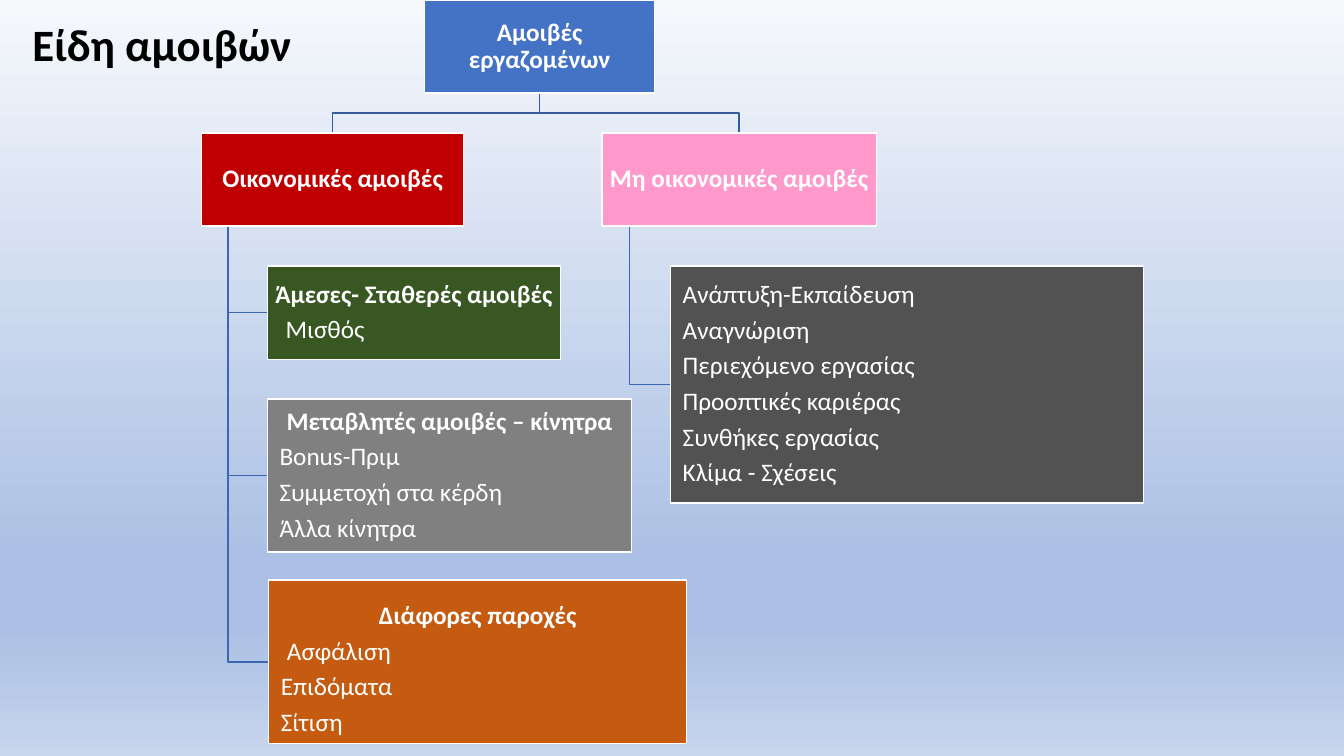
from copy import deepcopy
from dataclasses import dataclass

from pptx import Presentation
from pptx.dml.color import RGBColor as Rgb
from pptx.enum.shapes import MSO_SHAPE as Preset
from pptx.enum.text import MSO_ANCHOR as Anchor, PP_ALIGN as Align
from pptx.oxml.ns import qn
from pptx.util import Inches, Pt

WHITE = Rgb(0xFF, 0xFF, 0xFF)
BLACK = Rgb(0x00, 0x00, 0x00)
BLUE = Rgb(0x44, 0x72, 0xC4)
RED = Rgb(0xC0, 0x00, 0x00)
PINK = Rgb(0xFF, 0x99, 0xCC)
GREEN = Rgb(0x38, 0x57, 0x23)
GREY = Rgb(0x80, 0x80, 0x80)
ORANGE = Rgb(0xC5, 0x5A, 0x11)
CHARCOAL = Rgb(0x52, 0x52, 0x52)
TOP_BRANCH = Rgb(0x36, 0x5B, 0x9D)
SIDE_BRANCH = Rgb(0x3E, 0x67, 0xB2)
SKY = [(0, Rgb(0xF6, 0xF8, 0xFC)), (0.74, Rgb(0xAB, 0xC0, 0xE4)),
       (0.83, Rgb(0xAB, 0xC0, 0xE4)), (1, Rgb(0xC7, 0xD5, 0xED))]


@dataclass
class Node:
    """A box of the chart, placed in columns and rows."""
    left: float
    top: float
    width: float
    fill: Rgb
    heading: str = ""
    items: tuple = ()
    height: float = 0.7
    first_indent: float = 0.08
    top_inset: float = 0.01

    @property
    def center(self):
        return self.left + self.width / 2

    @property
    def middle(self):
        return self.top + self.height / 2

    @property
    def bottom(self):
        return self.top + self.height

    @property
    def trunk(self):
        return self.left + self.width / 10


class Chart:
    font = "Calibri"
    column = Inches(13.33) / 10
    row = Inches(1.32)
    item_indent = 0.08

    def __init__(self, page):
        self.page = page

    def x(self, columns):
        return round(columns * self.column)

    def y(self, rows):
        return round(rows * self.row)

    def background(self, stops):
        fill = self.page.background.fill
        fill.gradient()
        fill.gradient_angle = 270
        stop_list = self.page.element.find(".//" + qn("a:gsLst"))
        while len(stop_list) < len(stops):
            stop_list.append(deepcopy(stop_list[0]))
        for stop, (position, color) in zip(fill.gradient_stops, stops):
            stop.position = position
            stop.color.rgb = color

    def add_span(self, para, text, size, color, bold):
        span = para.add_run()
        span.text = text
        span.font.name = self.font
        span.font.size = Pt(size)
        span.font.bold = bold
        span.font.color.rgb = color

    def title(self, text, width, height):
        box = self.page.shapes.add_textbox(0, 0, self.x(width), self.y(height))
        frame = box.text_frame
        frame.word_wrap = True
        frame.vertical_anchor = Anchor.MIDDLE
        para = frame.paragraphs[0]
        para.alignment = Align.CENTER
        self.add_span(para, text, 32, BLACK, True)

    def branch(self, points, color):
        (start_x, start_y), *rest = [(self.x(x), self.y(y)) for x, y in points]
        builder = self.page.shapes.build_freeform(start_x, start_y)
        builder.add_line_segments(rest, close=False)
        line = builder.convert_to_shape()
        line.shadow.inherit = False
        line.fill.background()
        line.line.color.rgb = color
        line.line.width = Pt(1)

    def drop(self, parent, child):
        level = (parent.bottom + child.top) / 2
        self.branch([(parent.center, parent.bottom), (parent.center, level),
                     (child.center, level), (child.center, child.top)], TOP_BRANCH)

    def hang(self, parent, child):
        self.branch([(parent.trunk, parent.bottom), (parent.trunk, child.middle),
                     (child.left, child.middle)], SIDE_BRANCH)

    def node(self, node):
        box = self.page.shapes.add_shape(
            Preset.RECTANGLE, self.x(node.left), self.y(node.top),
            self.x(node.width), self.y(node.height))
        box.shadow.inherit = False
        box.fill.solid()
        box.fill.fore_color.rgb = node.fill
        box.line.color.rgb = WHITE
        box.line.width = Pt(1)
        frame = box.text_frame
        frame.word_wrap = True
        frame.vertical_anchor = Anchor.MIDDLE
        frame.margin_left = frame.margin_right = Inches(0.04)
        frame.margin_top = Inches(node.top_inset)
        frame.margin_bottom = Inches(0.01)

        lines = [(node.heading, True, 0)] if node.heading else []
        for number, item in enumerate(node.items):
            indent = self.item_indent if number else node.first_indent
            lines.append((item, False, indent))
        for number, (text, bold, indent) in enumerate(lines):
            para = frame.add_paragraph() if number else frame.paragraphs[0]
            para.alignment = Align.CENTER if bold else Align.LEFT
            para.line_spacing = 0.9
            para.space_after = Pt(6)
            para._p.get_or_add_pPr().set("marL", str(Inches(indent)))
            self.add_span(para, text, 18, WHITE, bold)


def main():
    deck = Presentation()
    deck.slide_width, deck.slide_height = Inches(13.33), Inches(7.5)
    chart = Chart(deck.slides.add_slide(deck.slide_layouts[6]))
    chart.background(SKY)

    # Boxes of the chart
    root = Node(3.16, 0, 1.71, BLUE, "Αμοιβές εργαζομένων")
    financial = Node(1.5, 1, 1.95, RED, "Οικονομικές αμοιβές")
    other = Node(4.48, 1, 2.04, PINK, "Μη οικονομικές αμοιβές")
    kinds = [
        Node(1.99, 2, 2.18, GREEN, "Άμεσες- Σταθερές αμοιβές",
             ("Μισθός",), first_indent=0.14),
        Node(1.99, 3, 2.71, GREY, "Μεταβλητές αμοιβές – κίνητρα",
             ("Bonus-Πριμ", "Συμμετοχή στα κέρδη", "Άλλα κίνητρα"),
             height=1.15),
        Node(2, 4.36, 3.11, ORANGE, "Διάφορες παροχές",
             ("Ασφάλιση", "Επιδόματα", "Σίτιση"),
             height=1.23, first_indent=0.14, top_inset=0.17),
    ]
    rewards = Node(4.99, 2, 3.52, CHARCOAL, height=1.78, items=(
        "Ανάπτυξη-Εκπαίδευση", "Αναγνώριση", "Περιεχόμενο εργασίας",
        "Προοπτικές καριέρας", "Συνθήκες εργασίας", "Κλίμα - Σχέσεις"))

    # Branches, behind the boxes
    for child in (financial, other):
        chart.drop(root, child)
    for child in kinds:
        chart.hang(financial, child)
    chart.hang(other, rewards)

    # Boxes and title
    for node in (root, financial, *kinds, other, rewards):
        chart.node(node)
    chart.title("Είδη αμοιβών", 2.41, 0.66)

    deck.save("out.pptx")


if __name__ == "__main__":
    main()
